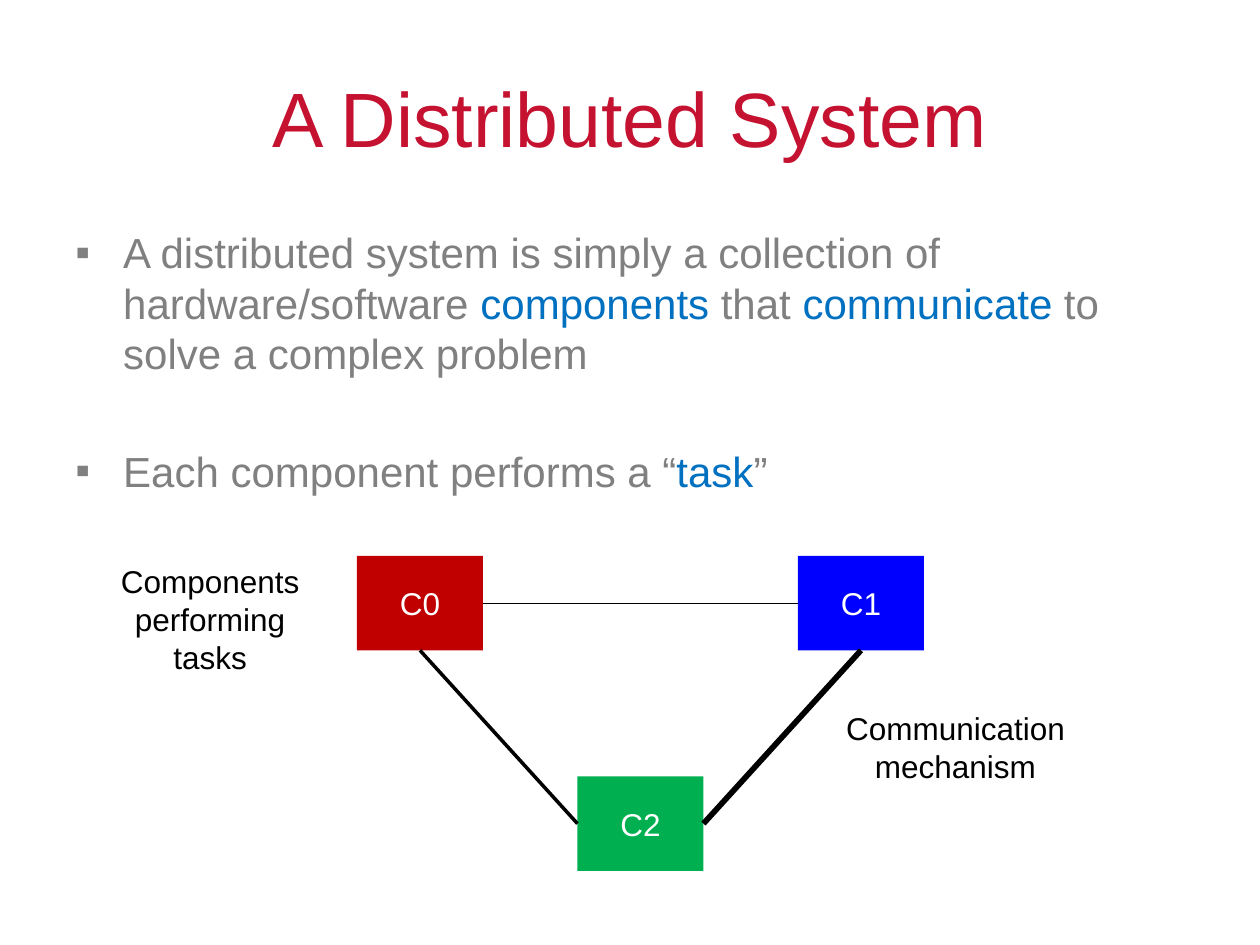
from collections import namedtuple

from lxml.etree import SubElement
from pptx import Presentation
from pptx.dml.color import RGBColor
from pptx.enum.shapes import MSO_CONNECTOR, MSO_SHAPE
from pptx.enum.text import MSO_ANCHOR, PP_ALIGN
from pptx.oxml.ns import qn
from pptx.util import Inches, Pt

COLORS = {
    "title": "C41230",
    "body": "808080",
    "accent": "0070C0",
    "red": "C00000",
    "blue": "0000FF",
    "green": "00B050",
    "white": "FFFFFF",
    "black": "000000",
}
FONT = "Arial"
WIDTH, HEIGHT = Inches(10), Inches(7.5)
COLUMNS, ROWS = 31, 10  # grid of the diagram

BOTTOM, LEFT, RIGHT = 2, 1, 3  # connection sites of a rectangle

Box = namedtuple("Box", "left top width height")


def slide_box(left, top, width, height):
    """Box from shares of the slide's size."""
    return Box(int(left * WIDTH), int(top * HEIGHT), int(width * WIDTH), int(height * HEIGHT))


def grid_box(box, column, row, columns, rows):
    """Part of a box, measured in the diagram's columns and rows."""
    column_width, row_height = box.width / COLUMNS, box.height / ROWS
    return Box(
        int(box.left + column * column_width),
        int(box.top + row * row_height),
        int(columns * column_width),
        int(rows * row_height),
    )


def color(name):
    return RGBColor.from_string(COLORS[name])


def style(paragraph, size, color_name, alignment=PP_ALIGN.CENTER):
    paragraph.alignment = alignment
    paragraph.font.name = FONT
    paragraph.font.size = Pt(size)
    paragraph.font.color.rgb = color(color_name)


def add_text(slide, box, lines, size, color_name, anchor=MSO_ANCHOR.TOP):
    frame = slide.shapes.add_textbox(*box).text_frame
    frame.word_wrap = True
    frame.vertical_anchor = anchor
    frame.text = "\n".join(lines)
    for paragraph in frame.paragraphs:
        style(paragraph, size, color_name)


def add_bullet(paragraph):
    properties = paragraph._p.get_or_add_pPr()
    properties.set("marL", str(Inches(0.38)))
    properties.set("indent", str(-Inches(0.38)))
    SubElement(properties, qn("a:buFont"), typeface=FONT)
    SubElement(properties, qn("a:buChar"), char="▪")


def add_bullets(slide, box, items):
    """Each item is a list of (text, is_accented) pairs."""
    frame = slide.shapes.add_textbox(*box).text_frame
    frame.word_wrap = True
    for index, item in enumerate(items):
        paragraph = frame.add_paragraph() if index else frame.paragraphs[0]
        add_bullet(paragraph)
        if index:
            paragraph.space_before = Pt(38.5)
        style(paragraph, 24, "body", PP_ALIGN.LEFT)
        for text, is_accented in item:
            run = paragraph.add_run()
            run.text = text
            run.font.color.rgb = color("accent" if is_accented else "body")


def add_component(slide, box, name, fill):
    shape = slide.shapes.add_shape(MSO_SHAPE.RECTANGLE, *box)
    shape.shadow.inherit = False
    shape.fill.solid()
    shape.fill.fore_color.rgb = color(fill)
    shape.line.fill.background()
    frame = shape.text_frame
    frame.text = name
    frame.vertical_anchor = MSO_ANCHOR.MIDDLE
    style(frame.paragraphs[0], 18, "white")
    return shape


def add_link(slide, start, start_site, end, end_site, width):
    connector = slide.shapes.add_connector(MSO_CONNECTOR.STRAIGHT, 0, 0, 0, 0)
    connector.begin_connect(start, start_site)
    connector.end_connect(end, end_site)
    connector.line.color.rgb = color("black")
    connector.line.width = Pt(width)
    SubElement(connector._element.spPr, qn("a:effectLst"))


def add_diagram(slide, box):
    c0, c1, c2 = [
        add_component(slide, grid_box(box, column, row, 4, 3), name, fill)
        for name, column, row, fill in (
            ("C0", 8, 0, "red"),
            ("C1", 22, 0, "blue"),
            ("C2", 15, 7, "green"),
        )
    ]
    add_link(slide, c0, RIGHT, c1, LEFT, 0.5)
    add_link(slide, c2, RIGHT, c1, BOTTOM, 3.25)
    add_link(slide, c2, LEFT, c0, BOTTOM, 2)
    add_text(slide, grid_box(box, 23, 4.67, 8, 2.83), ["Communication mechanism"], 18, "black")
    add_text(slide, grid_box(box, 0, 0, 6.67, 4), ["Components", "performing tasks"], 18, "black")


def main():
    presentation = Presentation()
    presentation.slide_width, presentation.slide_height = WIDTH, HEIGHT
    slide = presentation.slides.add_slide(presentation.slide_layouts[6])
    add_text(slide, slide_box(0.05, 0.04, 0.9, 1 / 6), ["A Distributed System"],
             44, "title", MSO_ANCHOR.MIDDLE)
    add_bullets(slide, slide_box(0.05, 7 / 30, 0.9, 0.66), [
        [
            ("A distributed system is simply a collection of hardware/software ", False),
            ("components", True),
            (" that ", False),
            ("communicate", True),
            (" to solve a complex problem", False),
        ],
        [("Each component performs a “", False), ("task", True), ("”", False)],
    ])
    add_diagram(slide, slide_box(1 / 12, 10 / 17, 0.775, 1 / 3))
    presentation.save("out.pptx")


if __name__ == "__main__":
    main()
